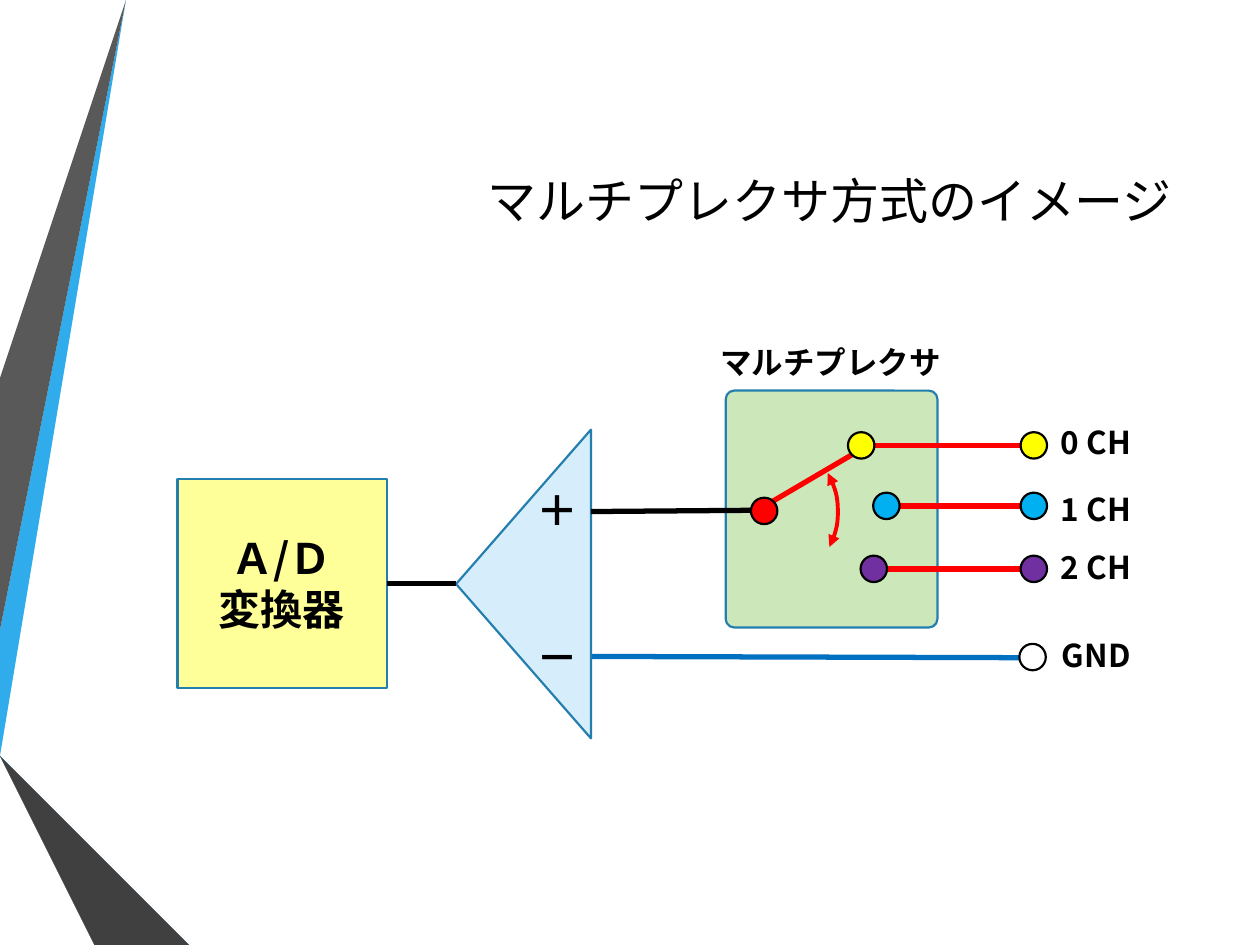
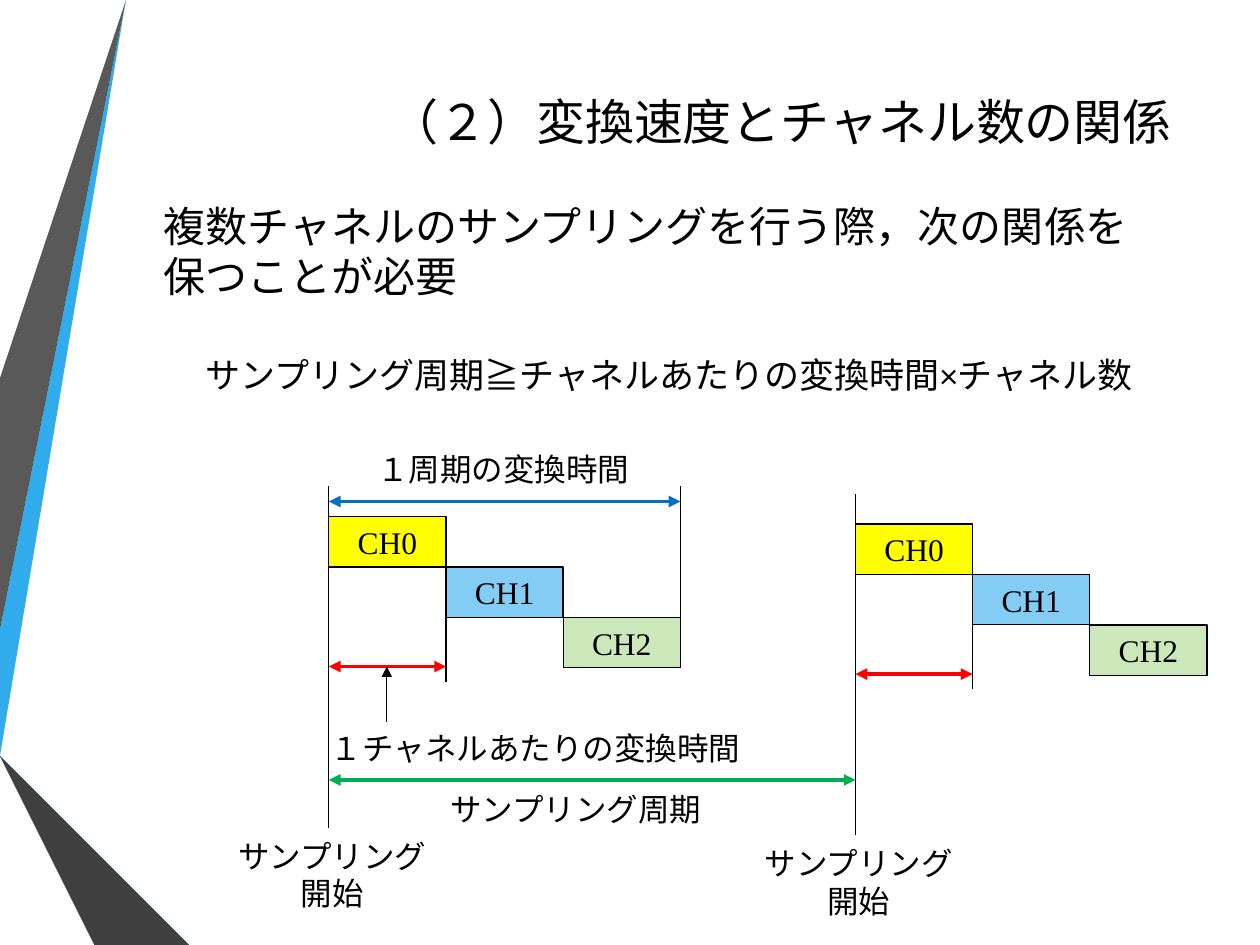
from lxml.etree import SubElement
from pptx import Presentation
from pptx.dml.color import RGBColor
from pptx.enum.shapes import MSO_CONNECTOR as CONN, MSO_SHAPE as SHAPE
from pptx.enum.text import MSO_ANCHOR as ANCHOR, MSO_AUTO_SIZE as AUTO, PP_ALIGN as ALIGN
from pptx.oxml.ns import qn
from pptx.util import Inches, Pt

COLORS = {
    "black": "000000", "white": "FFFFFF", "red": "FF0000", "yellow": "FFFF00",
    "cyan": "00B0F0", "purple": "7030A0", "blue": "0070C0", "green": "00B050",
    "outline": "247FAF", "cream": "FFFF99", "pale_blue": "D6EEFB",
    "sky": "83CDF4", "leaf": "CCE7B9", "band_blue": "30ACEC",
    "band_gray": "595959", "fold_black": "262626", "fold_navy": "0C5A82",
    "fold_blue": "1287C3", "fold_gray": "404040",
}
CJK, SERIF, SANS = "Noto Sans CJK JP", "Times New Roman", "Calibri"
BANDS = [
    ("band_blue", [(0, 5.44), (0, 5.75), (0.22, 5.79), (1.17, 0), (0.89, 0)]),
    ("band_gray", [(0.83, 0), (0.55, 0), (0, 3.36), (0, 5.06)]),
    ("fold_black", [(0, 6.19), (0, 6.21), (0.93, 7.5), (0.99, 7.5)]),
    ("fold_navy", [(0, 5.79), (0, 5.8), (1.56, 7.5), (1.63, 7.5)]),
    ("fold_blue", [(0, 5.79), (1.63, 7.5), (2.33, 7.5), (0.22, 5.79), (0, 5.75)]),
    ("fold_gray", [(0, 6.19), (0.99, 7.5), (1.51, 7.5), (0, 5.86)]),
]
DOT = 0.21
BOTH = ("headEnd", "tailEnd")


def rgb(name):
    return RGBColor.from_string(COLORS[name])


def style_paragraph(p, size, font, align=ALIGN.LEFT, bold=False):
    p.alignment = align
    p.font.size = Pt(size)
    p.font.bold = bold
    p.font.color.rgb = rgb("black")
    p.font.name = font
    SubElement(p._p.pPr.find(qn("a:defRPr")), qn("a:ea"), typeface=CJK)


def write(tf, text, size, font, align=ALIGN.CENTER, bold=False):
    tf.word_wrap = True
    for i, line in enumerate(text.split("\n")):
        p = tf.add_paragraph() if i else tf.paragraphs[0]
        p.add_run().text = line
        style_paragraph(p, size, font, align, bold)


def add_text(s, text, x, y, w, h, size=18, font=SERIF, align=ALIGN.CENTER, bold=False):
    tb = s.shapes.add_textbox(Inches(x), Inches(y), Inches(w), Inches(h))
    write(tb.text_frame, text, size, font, align, bold)
    return tb


def add_shape(s, kind, x, y, w, h, fill, line="outline", width=1.25):
    sp = s.shapes.add_shape(kind, Inches(x), Inches(y), Inches(w), Inches(h))
    sp.shadow.inherit = False
    if fill:
        sp.fill.solid()
        sp.fill.fore_color.rgb = rgb(fill)
    else:
        sp.fill.background()
    sp.line.color.rgb = rgb(line)
    sp.line.width = Pt(width)
    return sp


def add_dot(s, x, y, fill):
    add_shape(s, SHAPE.OVAL, x, y, DOT, DOT, fill, "black")


def add_arrowheads(sp, ends):
    ln = sp.element.spPr.find(qn("a:ln"))
    for end in ends:
        SubElement(ln, qn("a:" + end), type="triangle")


def add_line(s, x1, y1, x2, y2, color="black", width=0.75, ends=()):
    c = s.shapes.add_connector(CONN.STRAIGHT, Inches(x1), Inches(y1), Inches(x2), Inches(y2))
    c.line.color.rgb = rgb(color)
    c.line.width = Pt(width)
    add_arrowheads(c, ends)
    SubElement(c.element.spPr, qn("a:effectLst"))
    return c


def move_bands_to_layout(s):
    for color, points in BANDS:
        fb = s.shapes.build_freeform(*points[0], scale=Inches(1))
        fb.add_line_segments(points[1:], close=True)
        sp = fb.convert_to_shape()
        sp.shadow.inherit = False
        sp.fill.solid()
        sp.fill.fore_color.rgb = rgb(color)
        sp.line.fill.background()
        s.slide_layout.shapes.element.append(sp.element)


def add_slide(prs, title, title_h):
    s = prs.slides.add_slide(prs.slide_layouts[5])
    sp = s.shapes.title
    sp.left, sp.top, sp.width, sp.height = map(Inches, (1.07, 0.5, 8.43, title_h))
    tf = sp.text_frame
    tf.auto_size = AUTO.NONE
    tf.vertical_anchor = ANCHOR.MIDDLE
    tf.margin_right = Inches(0.2)
    write(tf, title, 28, SANS, ALIGN.RIGHT)
    return s


def converter(s, x, y):
    box = add_shape(s, SHAPE.RECTANGLE, x, y, 1.66, 1.66, "cream")
    add_text(s, "Ａ/Ｄ\n変換器", x + 0.12, y + 0.38, 1.41, 0.91, 24, CJK, bold=True)
    output = add_line(s, x + 1.66, y + 0.83, x + 2.21, y + 0.83, width=3)
    output.begin_connect(box, 3)


def amplifier(s, x, y):
    w, h = 1.07, 2.45
    sp = add_shape(s, SHAPE.ISOSCELES_TRIANGLE, x + (w - h) / 2, y + (h - w) / 2,
                   h, w, "pale_blue")
    sp.rotation = 270
    for sign, dy in (("＋", 0.39), ("－", 1.55)):
        add_text(s, sign, x + 0.36, y + dy, 0.71, 0.5, 24, CJK, ALIGN.RIGHT, True)


def multiplexer(s, x, y):
    add_text(s, "マルチプレクサ", x - 0.22, y - 0.43, 2.1, 0.4, 18, CJK, bold=True)
    body = add_shape(s, SHAPE.ROUNDED_RECTANGLE, x, y, 1.68, 1.88, "leaf")
    body.adjustments[0] = 0.04
    add_line(s, x - 1.07, y + 0.96, x + 0.2, y + 0.95, width=3)
    add_line(s, x + 0.37, y + 0.88, x + 1, y + 0.51, "red", 3)
    add_dot(s, x + 0.2, y + 0.85, "red")
    swing = add_shape(s, SHAPE.ARC, x - 0.3, y + 0.35, 1.19, 1.22, None, "red", 2.25)
    swing.adjustments[0], swing.adjustments[1] = 197.59, 16.83
    add_arrowheads(swing, BOTH)

    channels = [("yellow", 0.97, 0.33, 0.21), ("cyan", 1.17, 0.81, 0.74),
                ("purple", 1.07, 1.31, 1.2)]
    for i, (color, dx, dy, label_dy) in enumerate(channels):
        mid = y + dy + DOT / 2
        add_line(s, x + dx + DOT, mid, x + 2.34, mid, "red", 3)
        add_dot(s, x + dx, y + dy, color)
        add_dot(s, x + 2.34, y + dy, color)
        terminal_label(s, f"{i} CH", x + 2.56, y + label_dy)


def terminal_label(s, text, x, y):
    add_text(s, text, x, y, 0.84, 0.4, 18, CJK, ALIGN.LEFT, True)


def ground(s, x, y):
    add_line(s, x, y, x + 3.4, y + 0.01, "blue", 3)
    add_dot(s, x + 3.4, y - 0.1, "white")
    terminal_label(s, "GND", x + 3.64, y - 0.21)


def relation_text(s, x, y):
    tb = add_text(s, "複数チャネルのサンプリングを行う際，次の関係を保つことが必要",
                  x, y, 8.18, 1.72, 24, SANS, ALIGN.LEFT)
    p = tb.text_frame.add_paragraph()
    p.add_run().text = "サンプリング周期≧チャネルあたりの変換時間×チャネル数"
    p.space_before = Pt(30)
    style_paragraph(p, 20, SANS)
    p._p.pPr.set("marL", str(Inches(0.33)))


def sampling_cycle(s, x, y):
    w, h = 0.93, 0.4
    for i, color in enumerate(("yellow", "sky", "leaf")):
        sp = add_shape(s, SHAPE.RECTANGLE, x + i * w, y + 0.24 + i * h, w, h,
                       color, "black", 0.75)
        write(sp.text_frame, f"CH{i}", 18, SERIF)
    add_line(s, x, y, x, y + 2.71)
    add_line(s, x + w, y + 0.64, x + w, y + 1.55)
    add_line(s, x + w, y + 1.43, x, y + 1.43, "red", 2.25, BOTH)
    add_text(s, "サンプリング\n開始", x - 1.12, y + 2.73, 2.29, 0.71)


def cycle_dimensions(s, x, y):
    add_line(s, x + 2.79, y, x + 2.79, y + 1.32)
    add_line(s, x + 2.79, y + 0.12, x, y + 0.12, "blue", 2.25, BOTH)
    add_text(s, "１周期の変換時間", x + 0.24, y - 0.34, 2.29, 0.4)
    add_line(s, x + 0.46, y + 1.43, x + 0.46, y + 1.87, ends=("headEnd",))
    add_text(s, "１チャネルあたりの変換時間", x - 0.2, y + 1.88, 3.68, 0.4)
    add_line(s, x + 4.18, y + 2.33, x, y + 2.33, "green", 2.25, BOTH)
    add_text(s, "サンプリング周期", x + 0.12, y + 2.36, 3.68, 0.4)


def multiplexer_slide(prs):
    s = add_slide(prs, "マルチプレクサ方式のイメージ", 2.17)
    move_bands_to_layout(s)
    ground(s, 4.69, 5.21)
    amplifier(s, 3.62, 3.41)
    converter(s, 1.41, 3.8)
    multiplexer(s, 5.76, 3.1)


def timing_slide(prs):
    s = add_slide(prs, "（２）変換速度とチャネル数の関係", 0.92)
    relation_text(s, 1.2, 1.54)
    sampling_cycle(s, 2.61, 3.86)
    sampling_cycle(s, 6.79, 3.92)
    cycle_dimensions(s, 2.61, 3.86)


def main():
    prs = Presentation()
    prs.slide_width, prs.slide_height = Inches(10), Inches(7.5)
    multiplexer_slide(prs)
    timing_slide(prs)
    prs.save("out.pptx")


if __name__ == "__main__":
    main()
